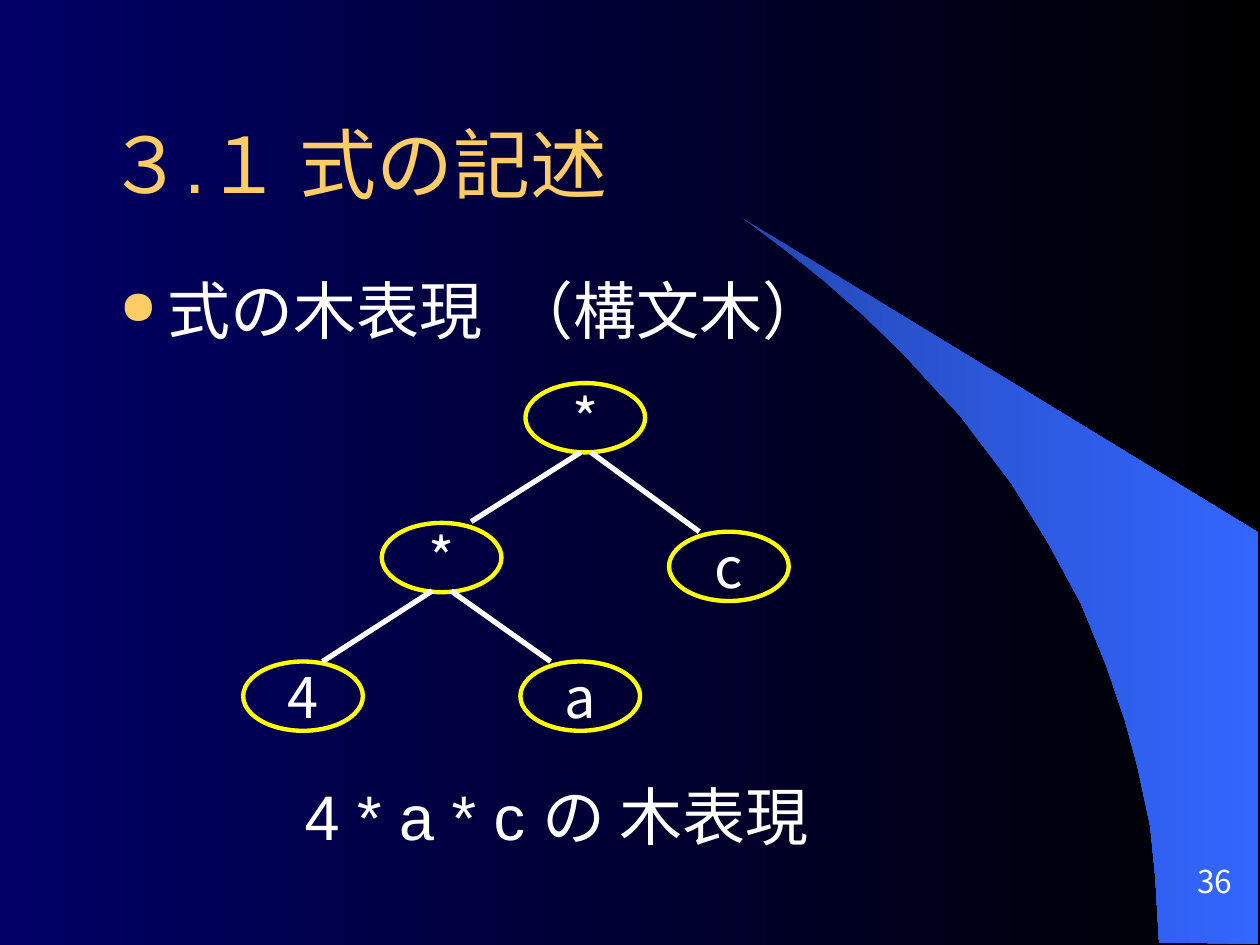
from pptx import Presentation
from pptx.dml.color import RGBColor
from pptx.enum.shapes import MSO_CONNECTOR, MSO_SHAPE
from pptx.enum.text import MSO_ANCHOR, PP_ALIGN
from pptx.oxml.ns import qn
from pptx.util import Inches, Pt
from lxml import etree

ELLIPSE = MSO_SHAPE.OVAL
STRAIGHT = MSO_CONNECTOR.STRAIGHT
MIDDLE, BOTTOM, TOP = MSO_ANCHOR.MIDDLE, MSO_ANCHOR.BOTTOM, MSO_ANCHOR.TOP
LEFT, CENTER, RIGHT = PP_ALIGN.LEFT, PP_ALIGN.CENTER, PP_ALIGN.RIGHT
TITLE_ONLY = 5

COLORS = {
    "navy": "000066", "black": "000000", "gold": "FFCC66", "white": "FFFFFF",
    "yellow": "FFFF00", "swoosh_dark": "2449B6", "swoosh_light": "3366FF",
}
LATIN, JAPANESE = "Arial", "Noto Sans CJK JP"
NODE_WIDTH, NODE_HEIGHT = 0.95, 0.55


class SlideBuilder:
    def __init__(self, slide):
        self.slide = slide
        self.shapes = slide.shapes

    def color(self, name):
        return RGBColor.from_string(COLORS[name])

    def gradient(self, fill, start, end):
        fill.gradient()
        fill.gradient_angle = 0
        for stop, name, position in zip(fill.gradient_stops, (start, end), (0, 1)):
            stop.color.rgb = self.color(name)
            stop.position = position

    def place(self, shape, left, top, width, height):
        shape.left, shape.top = Inches(left), Inches(top)
        shape.width, shape.height = Inches(width), Inches(height)

    def set_text(self, shape, text, size, color="white", font=JAPANESE,
                 align=LEFT, anchor=TOP, wrap=True):
        frame = shape.text_frame
        frame.text = text
        frame.word_wrap = wrap
        frame.vertical_anchor = anchor
        paragraph = frame.paragraphs[0]
        paragraph.alignment = align
        for run in paragraph.runs:
            run.font.size = Pt(size)
            run.font.name = font
            run.font.color.rgb = self.color(color)
            east_asian = etree.SubElement(run.font._element, qn("a:ea"))
            east_asian.set("typeface", JAPANESE)

    def title(self, text, box):
        shape = self.shapes.title
        self.place(shape, *box)
        self.set_text(shape, text, 44, "gold", LATIN, anchor=MIDDLE)

    def text(self, text, box, size, **style):
        shape = self.shapes.add_textbox(*map(Inches, box))
        self.set_text(shape, text, size, **style)
        return shape

    def bullet(self, text, box, size):
        shape = self.text(text, box, size)
        frame = shape.text_frame
        frame.margin_left = frame.margin_right = Inches(0.2)
        paragraph = frame.paragraphs[0]
        paragraph.line_spacing = 0.9
        properties = paragraph._p.get_or_add_pPr()
        properties.set("marL", str(Inches(0.38)))
        properties.set("indent", str(-Inches(0.38)))
        bullet_color = etree.SubElement(properties, qn("a:buClr"))
        etree.SubElement(bullet_color, qn("a:srgbClr")).set("val", COLORS["gold"])
        etree.SubElement(properties, qn("a:buSzPct")).set("val", "75000")
        etree.SubElement(properties, qn("a:buChar")).set("char", "●")

    def node(self, label, left, top):
        box = map(Inches, (left, top, NODE_WIDTH, NODE_HEIGHT))
        shape = self.shapes.add_shape(ELLIPSE, *box)
        shape.shadow.inherit = False
        shape.fill.background()
        shape.line.color.rgb = self.color("yellow")
        shape.line.width = Pt(2.5)
        self.set_text(shape, label, 32, align=CENTER, anchor=MIDDLE, wrap=False)

    def edge(self, start, end):
        line = self.shapes.add_connector(STRAIGHT, *map(Inches, start + end))
        line.line.color.rgb = self.color("white")
        line.line.width = Pt(3)
        etree.SubElement(line._element.spPr, qn("a:effectLst"))

    def swoosh(self, points):
        corners = [(Inches(x), Inches(y)) for x, y in points]
        builder = self.shapes.build_freeform(*corners[0])
        builder.add_line_segments(corners[1:], close=True)
        shape = builder.convert_to_shape()
        shape.shadow.inherit = False
        self.gradient(shape.fill, "swoosh_dark", "swoosh_light")
        shape.line.fill.background()


def main():
    presentation = Presentation()
    presentation.slide_width, presentation.slide_height = Inches(10), Inches(7.5)
    slide = presentation.slides.add_slide(presentation.slide_layouts[TITLE_ONLY])
    builder = SlideBuilder(slide)

    # Background and curved wedge
    builder.gradient(slide.background.fill, "navy", "black")
    builder.swoosh([
        (9.2, 7.48), (9.99, 7.49), (9.99, 4.23), (5.89, 1.73), (6.24, 1.99),
        (6.53, 2.22), (6.85, 2.5), (7.16, 2.8), (7.62, 3.3), (8.03, 3.84),
        (8.32, 4.31), (8.58, 4.79), (8.78, 5.28), (8.93, 5.72), (9.03, 6.09),
        (9.13, 6.56), (9.17, 6.96),
    ])

    # Title, topic and slide number
    builder.title("３.１ 式の記述", (0.75, 0.67, 8.84, 1.25))
    builder.bullet("式の木表現  （構文木）", (0.75, 2.17, 8.5, 3.95), 36)
    number = builder.text("36", (8.86, 6.72, 1.02, 0.42), 18,
                          align=RIGHT, anchor=BOTTOM, wrap=False)
    number.text_frame.margin_top = number.text_frame.margin_bottom = 0

    # Syntax tree
    nodes = [("*", 4.17, 3.04), ("*", 3.03, 4.15), ("4", 1.93, 5.25),
             ("a", 4.13, 5.25), ("c", 5.31, 4.22)]
    for label, left, top in nodes:
        builder.node(label, left, top)
    edges = [((4.61, 3.59), (3.74, 4.14)), ((3.43, 4.69), (2.56, 5.25)),
             ((4.69, 3.59), (5.55, 4.22)), ((3.58, 4.69), (4.37, 5.25))]
    for start, end in edges:
        builder.edge(start, end)

    # Caption
    builder.text("4 * a * c の 木表現", (2.32, 6.12, 4.8, 0.7), 36, font=LATIN)

    presentation.save("out.pptx")


if __name__ == "__main__":
    main()
